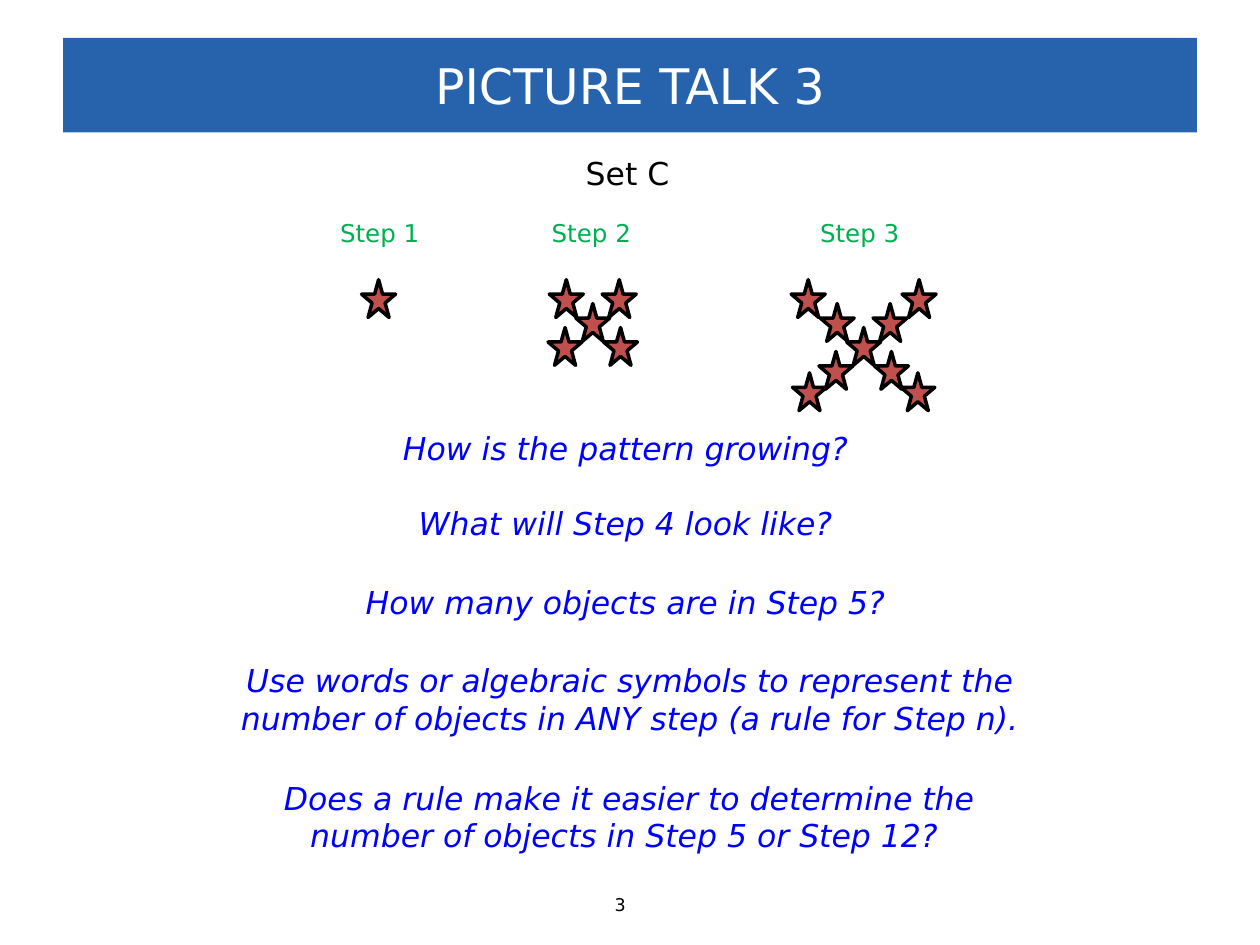
from pptx import Presentation
from pptx.dml.color import RGBColor
from pptx.enum.shapes import MSO_SHAPE
from pptx.enum.text import MSO_ANCHOR, PP_ALIGN
from pptx.util import Inches, Pt

FONT = "DejaVu Sans"
COLORS = {
    "banner": "2762AD",
    "title": "FFFFFF",
    "text": "000000",
    "question": "0000FF",
    "step": "00B050",
    "star": "C0504D",
    "outline": "000000",
}
STAR_WIDTH, STAR_HEIGHT = 0.27, 0.3
# Distance of each ring's stars from the middle star: (across, down)
RINGS = [
    {"upper": (0.21, -0.19), "lower": (0.22, 0.19)},
    {"upper": (0.44, -0.38), "lower": (0.43, 0.36)},
]
# Left and top of each step's label, then of its middle star
STEPS = [
    ((2.6, 1.68), (2.87, 2.22)),
    ((4.28, 1.68), (4.57, 2.41)),
    ((6.41, 1.68), (6.72, 2.6)),
]
QUESTIONS = [
    ("How is the pattern growing? ", (2.97, 3.36, 4.07, 0.4)),
    ("What will Step 4 look like? ", (3.11, 3.95, 3.79, 0.4)),
    ("How many objects are in Step 5? ", (2.77, 4.58, 4.47, 0.4)),
    ("Use words or algebraic symbols to represent the number of objects "
     "in ANY step (a rule for Step n).", (1.65, 5.2, 6.7, 0.71)),
    ("Does a rule make it easier to determine the number of objects "
     "in Step 5 or Step 12? ", (2.08, 6.13, 5.83, 0.71)),
]


def color(name):
    return RGBColor.from_string(COLORS[name])


def write(shape, text, size, color_name, align=PP_ALIGN.LEFT, italic=None):
    para = shape.text_frame.paragraphs[0]
    para.text = text
    para.alignment = align
    para.font.name = FONT
    para.font.size = Pt(size)
    para.font.italic = italic
    para.font.color.rgb = color(color_name)


def add_title(page, text, bounds):
    title = page.shapes.title
    title.left, title.top, title.width, title.height = map(Inches, bounds)
    title.fill.solid()
    title.fill.fore_color.rgb = color("banner")
    title.text_frame.vertical_anchor = MSO_ANCHOR.MIDDLE
    write(title, text, 28, "title", PP_ALIGN.CENTER)


def add_text(shapes, text, bounds, size, color_name, wrap=True, **style):
    box = shapes.add_textbox(*map(Inches, bounds))
    box.text_frame.word_wrap = wrap
    write(box, text, size, color_name, **style)


def add_star(shapes, left, top):
    star = shapes.add_shape(MSO_SHAPE.STAR_5_POINT, Inches(left), Inches(top),
                            Inches(STAR_WIDTH), Inches(STAR_HEIGHT))
    star.shadow.inherit = False
    star.fill.solid()
    star.fill.fore_color.rgb = color("star")
    star.line.color.rgb = color("outline")
    star.line.width = Pt(2)


def add_step(page, number, label, middle):
    """Place a label and an X of stars with one ring fewer than the step number."""
    shapes = page.shapes.add_group_shape().shapes
    left, top = middle
    add_star(shapes, left, top)
    for ring in RINGS[:number - 1]:
        for side, direction in (("lower", -1), ("lower", 1), ("upper", 1), ("upper", -1)):
            across, down = ring[side]
            add_star(shapes, left + direction * across, top + down)
    add_text(shapes, f"Step {number}", (*label, 0.88, 0.34), 14, "step")


def add_questions(page):
    for text, bounds in QUESTIONS:
        add_text(page.shapes, text, bounds, 18, "question",
                 align=PP_ALIGN.CENTER, italic=True)


def main():
    deck = Presentation()
    deck.slide_width, deck.slide_height = Inches(10), Inches(7.5)
    page = deck.slides.add_slide(deck.slide_layouts[5])
    add_title(page, "PICTURE TALK 3", (0.5, 0.3, 9, 0.75))
    add_text(page.shapes, "Set C", (4.55, 1.17, 0.89, 0.4), 18, "text", wrap=False)
    for number, (label, middle) in enumerate(STEPS, start=1):
        add_step(page, number, label, middle)
    add_questions(page)
    add_text(page.shapes, "3", (4.78, 7.05, 0.44, 0.27), 10, "text", wrap=False)
    deck.save("out.pptx")


if __name__ == "__main__":
    main()
